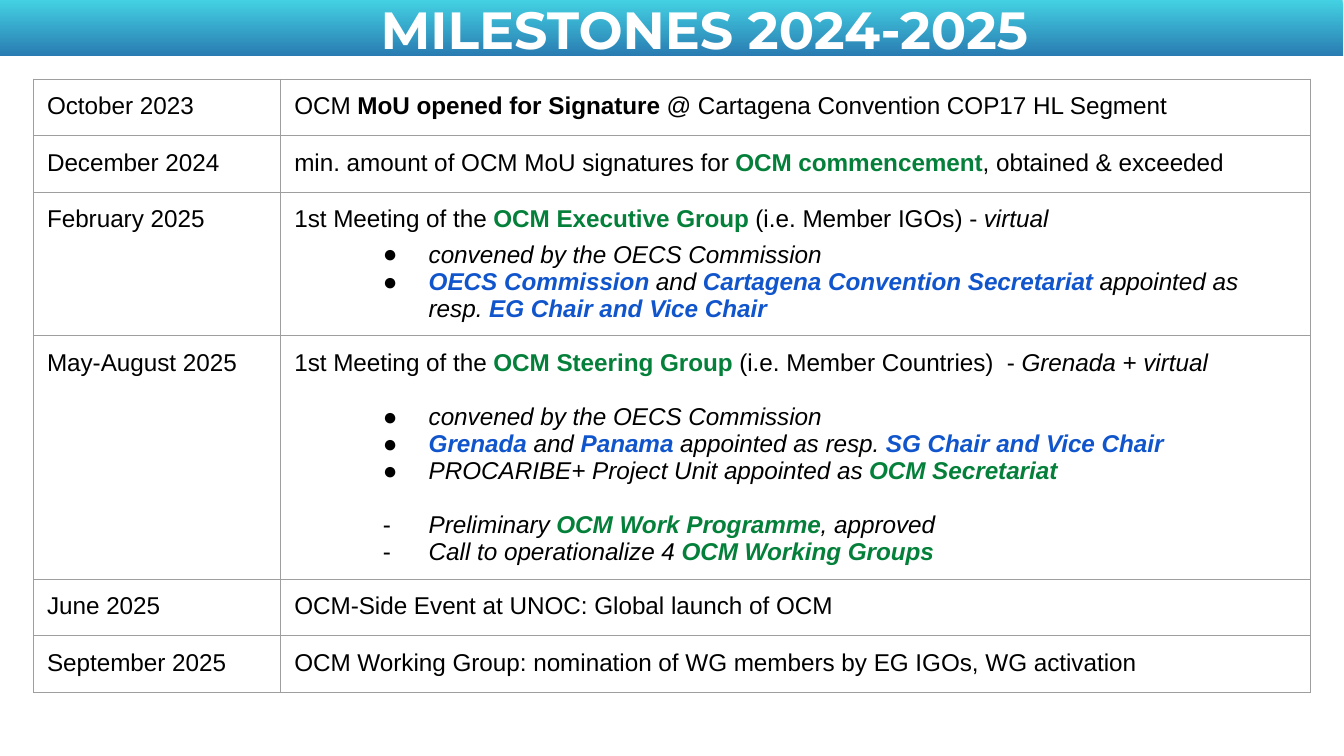
"""Build the milestones slide: a gradient title band above a two-column table."""
from pptx import Presentation
from pptx import util as u
from pptx.dml.color import RGBColor
from pptx.enum import text
from pptx.oxml import parse_xml
from pptx.oxml.ns import nsdecls

WHITE = RGBColor(0xFF, 0xFF, 0xFF)
BLACK = RGBColor(0, 0, 0)
GREEN = RGBColor(0x05, 0x80, 0x3A)
BLUE = RGBColor(0x11, 0x55, 0xCC)
AQUA = RGBColor(0x43, 0xD1, 0xE3)
OCEAN = RGBColor(0x29, 0x7B, 0xB1)
GREY = RGBColor(0x9E, 0x9E, 0x9E)

TITLE = "MILESTONES 2024-2025"
PLAIN, BOLD, ITALIC = "plain", "bold", "italic"
CONVENED = [("convened by the OECS Commission", PLAIN)]

# Each milestone: date, headline spans, then bullets as (mark, space before, spans).
MILESTONES = [
    ("October 2023",
     [("OCM ", PLAIN), ("MoU opened for Signature", BOLD),
      (" @ Cartagena Convention COP17 HL Segment", PLAIN)], []),
    ("December 2024",
     [("min. amount of OCM MoU signatures for ", PLAIN), ("OCM commencement", GREEN),
      (", obtained & exceeded", PLAIN)], []),
    ("February 2025",
     [("1st Meeting of the ", PLAIN), ("OCM Executive Group ", GREEN),
      ("(i.e. Member IGOs) - ", PLAIN), ("virtual", ITALIC)],
     [("●", 4.5, CONVENED),
      ("●", 0, [("OECS Commission", BLUE), (" and ", PLAIN),
                ("Cartagena Convention Secretariat", BLUE),
                (" appointed as resp. ", PLAIN), ("EG Chair and Vice Chair", BLUE)])]),
    ("May-August 2025",
     [("1st Meeting of the ", PLAIN), ("OCM Steering Group", GREEN),
      (" (i.e. Member Countries)  - ", PLAIN), ("Grenada + virtual", ITALIC)],
     [("●", 14.5, CONVENED),
      ("●", 0, [("Grenada", BLUE), (" and ", PLAIN), ("Panama", BLUE),
                (" appointed as resp. ", PLAIN), ("SG Chair and Vice Chair", BLUE)]),
      ("●", 0, [("PROCARIBE+ Project Unit appointed as ", PLAIN),
                ("OCM Secretariat", GREEN)]),
      ("-", 14.5, [("Preliminary ", PLAIN), ("OCM Work Programme", GREEN),
                   (", approved", PLAIN)]),
      ("-", 0, [("Call to operationalize 4 ", PLAIN), ("OCM Working Groups", GREEN)])]),
    ("June 2025", [("OCM-Side Event at UNOC: Global launch of OCM", PLAIN)], []),
    ("September 2025",
     [("OCM Working Group: nomination of WG members by EG IGOs, WG activation", PLAIN)], []),
]

WIDTH = u.Inches(10)
HEIGHT = WIDTH * 9 // 16
BAND = u.Inches(0.42)
INSET = u.Inches(0.1)
COLUMNS = [u.Inches(1.84), u.Inches(7.66)]


def set_margins(box):
    box.margin_left = box.margin_right = box.margin_top = box.margin_bottom = INSET


def indent(para, left, first=0):
    properties = para._p.get_or_add_pPr()
    properties.set("marL", str(u.Inches(left)))
    properties.set("indent", str(u.Inches(first)))
    return properties


def write(para, spans, italic=False):
    para.font.name, para.font.size = "Arial", u.Pt(13)
    for words, style in spans:
        span = para.add_run()
        span.text = words
        colored = style in (GREEN, BLUE)
        span.font.color.rgb = style if colored else BLACK
        span.font.bold = colored or style == BOLD
        span.font.italic = italic or style == ITALIC


def write_bullet(para, mark, space, spans):
    para.space_before = u.Pt(space)
    properties = indent(para, 1, -0.34)
    properties.append(parse_xml(
        f'<a:buClr {nsdecls("a")}><a:srgbClr val="{BLACK}"/></a:buClr>'))
    properties.append(parse_xml(f'<a:buFont {nsdecls("a")} typeface="Arial"/>'))
    properties.append(parse_xml(f'<a:buChar {nsdecls("a")} char="{mark}"/>'))
    write(para, spans, italic=True)


def style_cell(cell):
    set_margins(cell)
    for side in "LRTB":
        cell._tc.get_or_add_tcPr().append(parse_xml(
            f'<a:ln{side} {nsdecls("a")} w="{u.Pt(0.75)}"><a:solidFill>'
            f'<a:srgbClr val="{GREY}"/></a:solidFill></a:ln{side}>'))
    cell.fill.background()


def add_title(page):
    box = page.shapes.title
    box.left, box.top, box.width, box.height = u.Inches(-0.01), 0, WIDTH, BAND
    box.fill.gradient()
    box.fill.gradient_angle = 270
    for stop, color in zip(box.fill.gradient_stops, (AQUA, OCEAN)):
        stop.color.rgb = color
    frame = box.text_frame
    frame.text = TITLE
    frame.auto_size = text.MSO_AUTO_SIZE.NONE
    frame.vertical_anchor = text.MSO_ANCHOR.MIDDLE
    set_margins(frame)
    para = frame.paragraphs[0]
    para.alignment = text.PP_ALIGN.CENTER
    indent(para, 0.5)
    font = para.font
    font.name, font.size, font.bold = "Montserrat", u.Pt(28), True
    font.color.rgb = WHITE


def add_milestones(page):
    count = len(MILESTONES)
    table = page.shapes.add_table(count, 2, u.Inches(0.25), u.Inches(0.59),
                                  sum(COLUMNS), BAND * count).table
    table.first_row = table.horz_banding = False
    for column, width in zip(table.columns, COLUMNS):
        column.width = width
    for row, (date, headline, bullets) in zip(table.rows, MILESTONES):
        row.height = BAND
        for cell, spans in zip(row.cells, ([(date, PLAIN)], headline)):
            style_cell(cell)
            write(cell.text_frame.paragraphs[0], spans)
        for bullet in bullets:
            write_bullet(row.cells[1].text_frame.add_paragraph(), *bullet)


def main():
    deck = Presentation()
    deck.slide_width, deck.slide_height = WIDTH, HEIGHT
    page = deck.slides.add_slide(deck.slide_layouts[5])
    add_title(page)
    add_milestones(page)
    deck.save("out.pptx")


if __name__ == "__main__":
    main()
